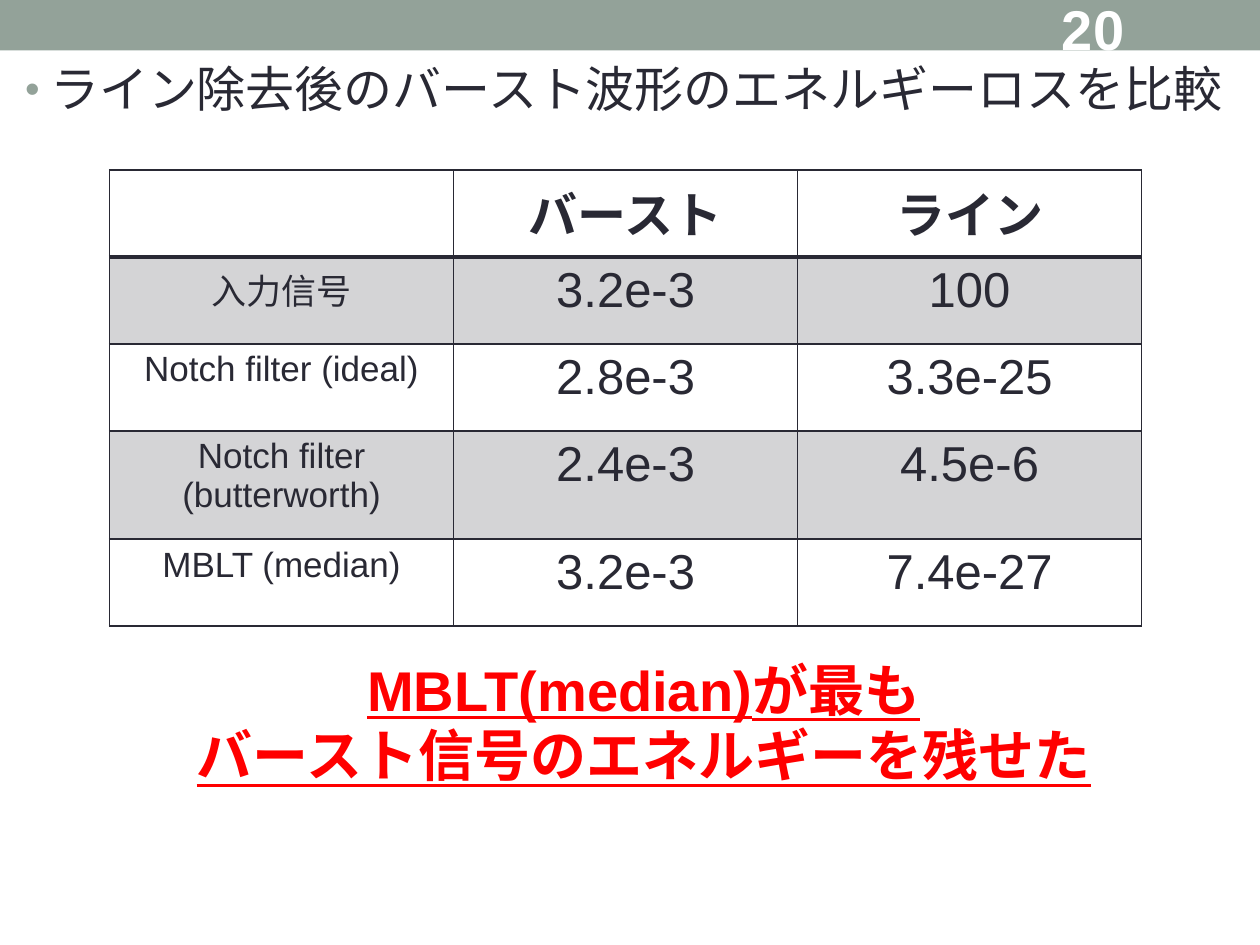
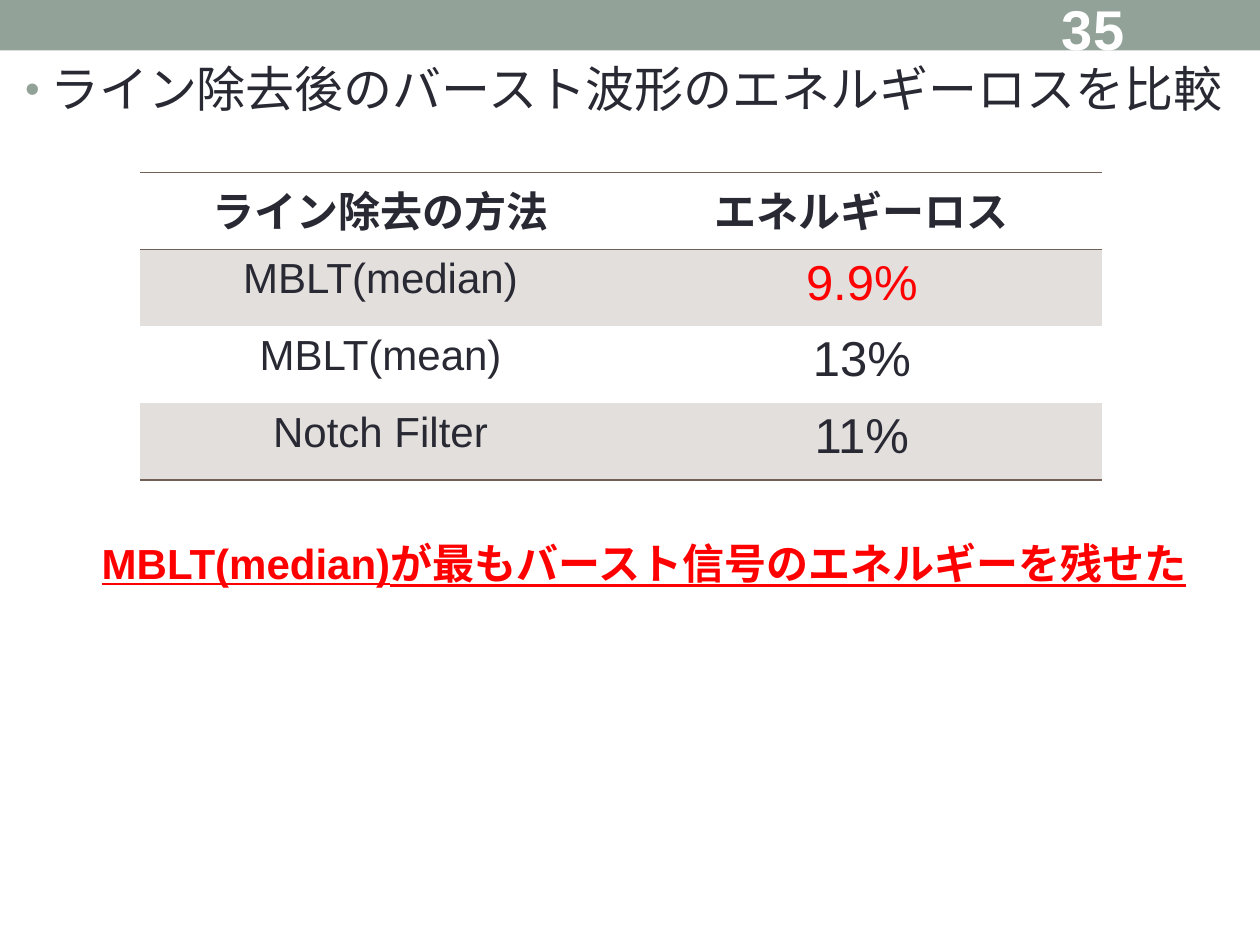
from lxml import etree
from pptx import Presentation
from pptx.dml.color import RGBColor
from pptx.enum.shapes import MSO_SHAPE
from pptx.enum.text import MSO_ANCHOR, PP_ALIGN
from pptx.oxml.ns import qn
from pptx.util import Inches, Pt

RECT = MSO_SHAPE.RECTANGLE
TOP, MIDDLE = MSO_ANCHOR.TOP, MSO_ANCHOR.MIDDLE
LEFT, CENTER = PP_ALIGN.LEFT, PP_ALIGN.CENTER
COLS, ROWS = 100, 75
UNIT = Inches(0.1)
HUES = {
    "band": "93A299",
    "ink": "292934",
    "gray": "D4D4D6",
    "brown": "726056",
    "sand": "E3DFDD",
    "red": "FF0000",
    "white": "FFFFFF",
}
EDGES = {"left": "a:lnL", "right": "a:lnR", "top": "a:lnT", "bottom": "a:lnB"}
TOPIC = "ライン除去後のバースト波形のエネルギーロスを比較"
BODY = {"size": Pt(28), "bold": False}
HEAD = {"size": Pt(28), "bold": True}
LABEL = {"size": Pt(20), "bold": False}
PAGE = {"size": Pt(32), "bold": True}
CLAIM = {"bold": True, "underline": True}


def tint(name):
    return RGBColor.from_string(HUES[name])


def units(*spans):
    return [round(span * UNIT) for span in spans]


def write(para, text, style, hue="ink", align=LEFT):
    para.alignment = align
    run = para.add_run()
    run.text = text
    for key, value in {"name": "Arial", **style}.items():
        setattr(run.font, key, value)
    run.font.color.rgb = tint(hue)


def add_text(slide, area, lines, style, hue="ink", align=LEFT, anchor=TOP):
    frame = slide.shapes.add_textbox(*units(*area)).text_frame
    frame.word_wrap = True
    frame.vertical_anchor = anchor
    for row, line in enumerate(lines):
        para = frame.add_paragraph() if row else frame.paragraphs[0]
        write(para, line, style, hue, align)
    return frame.paragraphs


def indent(para, left, first=0):
    props = para._p.get_or_add_pPr()
    props.set("marL", str(Inches(left)))
    props.set("indent", str(Inches(first)))
    return props


def add_topic(slide):
    para = add_text(slide, (1, 4.7, 97.2, 7), [TOPIC], BODY)[0]
    para.line_spacing = 0.9
    props = indent(para, 0.2, -0.2)
    color = etree.SubElement(props, qn("a:buClr"))
    etree.SubElement(color, qn("a:srgbClr"), val=HUES["band"])
    etree.SubElement(props, qn("a:buSzPct"), val="85000")
    etree.SubElement(props, qn("a:buFont"), typeface="Arial")
    etree.SubElement(props, qn("a:buChar"), char="•")


def add_claim(slide, top, size, lines):
    style = {**CLAIM, "size": Pt(size)}
    area = (1, top, 97.2, 7 * len(lines))
    for row, para in enumerate(add_text(slide, area, lines, style, "red", CENTER)):
        para.line_spacing = 0.9
        para.space_before = Pt(3 if row else 0)
        indent(para, 0.3)


def add_edges(cell, edges):
    props = cell._tc.get_or_add_tcPr()
    for row, (side, tag) in enumerate(EDGES.items()):
        hue, width = edges.get(side, (None, 0))
        line = etree.Element(qn(tag), w=str(Pt(width)))
        if hue:
            fill = etree.SubElement(line, qn("a:solidFill"))
            etree.SubElement(fill, qn("a:srgbClr"), val=HUES[hue])
        else:
            etree.SubElement(line, qn("a:noFill"))
        props.insert(row, line)


def add_grid(slide, spot, width, heights, data, stripe, label, edges):
    area = units(*spot, width * len(data[0]), sum(heights))
    table = slide.shapes.add_table(len(data), len(data[0]), *area).table
    table.first_row = table.horz_banding = False
    for col in table.columns:
        col.width = units(width)[0]
    for row, texts in enumerate(data):
        table.rows[row].height = units(heights[row])[0]
        for col, text in enumerate(texts):
            cell = table.cell(row, col)
            if row % 2:
                cell.fill.solid()
                cell.fill.fore_color.rgb = tint(stripe)
            else:
                cell.fill.background()
            add_edges(cell, edges(row))
            if text:
                style = label(row, col)
                hue = "red" if text == "9.9%" else "ink"
                write(cell.text_frame.paragraphs[0], text, style, hue, CENTER)


def add_page(deck, number):
    slide = deck.slides.add_slide(deck.slide_layouts[6])
    band = slide.shapes.add_shape(RECT, *units(0, 0, COLS, 4))
    band.shadow.inherit = False
    band.fill.solid()
    band.fill.fore_color.rgb = tint("band")
    band.line.fill.background()
    add_topic(slide)
    add_text(slide, (83.3, 0.4, 11.7, 3.6), [number], PAGE, "white", anchor=MIDDLE)
    return slide


def box_edges(row):
    edges = {side: ("ink", 1) for side in EDGES}
    if row < 2:
        edges["top" if row else "bottom"] = ("ink", 2)
    return edges


def rule_edges(row):
    rule = ("brown", 1)
    return {0: {"top": rule, "bottom": rule}, 1: {"top": rule}, 3: {"bottom": rule}}.get(row, {})


def box_style(row, col):
    if row == 0:
        return HEAD
    return BODY if col else LABEL


def rule_style(row, col):
    if row and col:
        return BODY
    return {"size": Pt(24), "bold": row == 0}


def main():
    deck = Presentation()
    deck.slide_width, deck.slide_height = units(COLS, ROWS)

    slide = add_page(deck, "20")
    power = [
        ("", "バースト", "ライン"),
        ("入力信号", "3.2e-3", "100"),
        ("Notch filter (ideal)", "2.8e-3", "3.3e-25"),
        ("Notch filter (butterworth)", "2.4e-3", "4.5e-6"),
        ("MBLT (median)", "3.2e-3", "7.4e-27"),
    ]
    heights = [6.9, 6.9, 6.9, 8.6, 6.9]
    add_grid(slide, (8.7, 13.5), 27.3, heights, power, "gray", box_style, box_edges)
    add_claim(slide, 52.1, 32, ["MBLT(median)が最も", "バースト信号のエネルギーを残せた"])

    slide = add_page(deck, "35")
    loss = [
        ("ライン除去の方法", "エネルギーロス"),
        ("MBLT(median)", "9.9%"),
        ("MBLT(mean)", "13%"),
        ("Notch Filter", "11%"),
    ]
    add_grid(slide, (11.1, 13.7), 38.2, [6.1] * 4, loss, "sand", rule_style, rule_edges)
    add_claim(slide, 42.6, 24, ["MBLT(median)が最もバースト信号のエネルギーを残せた"])

    deck.save("out.pptx")


if __name__ == "__main__":
    main()
